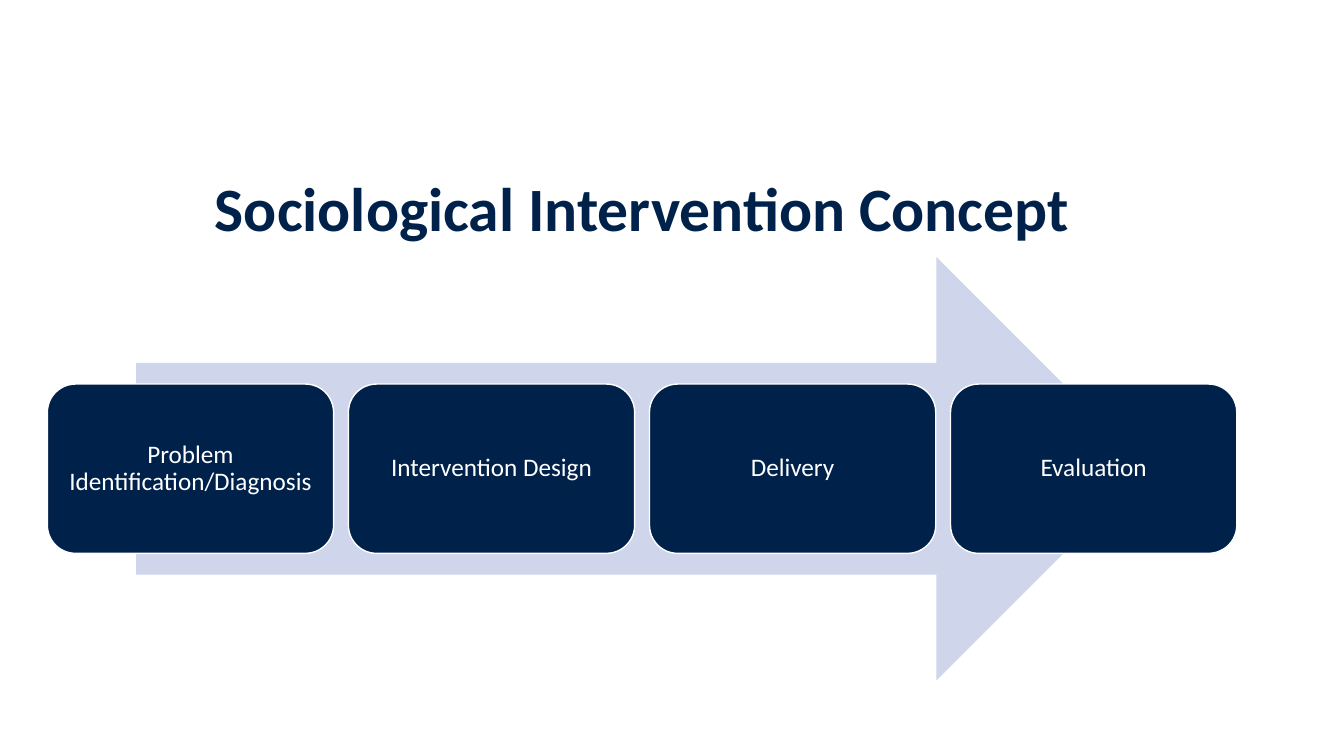
"""Build the Sociological Intervention Concept slide: four steps along an arrow."""
from dataclasses import dataclass

from pptx import Presentation
from pptx import util as u
from pptx.dml.color import RGBColor
from pptx.enum import shapes, text
from pptx.shapes.autoshape import Shape
from pptx.slide import Slide


@dataclass(frozen=True)
class Theme:
    """Colours and type of the slide."""

    navy: RGBColor = RGBColor(0x00, 0x21, 0x4A)
    lavender: RGBColor = RGBColor(0xCF, 0xD5, 0xEA)
    white: RGBColor = RGBColor(0xFF, 0xFF, 0xFF)
    font: str = "Calibri"
    title_size: float = 44
    step_size: float = 18
    line_spacing: float = 0.9


@dataclass(frozen=True)
class Box:
    """A rectangle in points."""

    left: float
    top: float
    width: float
    height: float

    def lengths(self) -> tuple[u.Length, ...]:
        """Return the position and size as lengths."""
        return tuple(u.Pt(value) for value in (self.left, self.top, self.width, self.height))


@dataclass(frozen=True)
class Step:
    """One stage of the intervention process."""

    label: str
    box: Box


THEME = Theme()
TITLE_BOX = Box(33.84, 118.08, 850.32, 65.52)
ARROW_BOX = Box(97.2, 183.6, 722.88, 302.4)
FIRST_STEP = Box(33.84, 274.32, 204.48, 120.96)
STEP_PITCH = 215.05
STEP_INSET = 5
LABELS = ("Problem Identification/Diagnosis", "Intervention Design", "Delivery", "Evaluation")
STEPS = [
    Step(label, Box(FIRST_STEP.left + index * STEP_PITCH, FIRST_STEP.top, FIRST_STEP.width, FIRST_STEP.height))
    for index, label in enumerate(LABELS)
]


def write_text(shape: Shape, wording: str, size: float, color: RGBColor, bold: bool = False) -> None:
    """Write one centred paragraph into a shape."""
    frame = shape.text_frame
    frame.word_wrap = True
    frame.vertical_anchor = text.MSO_ANCHOR.MIDDLE
    paragraph = frame.paragraphs[0]
    paragraph.text = wording
    paragraph.alignment = text.PP_ALIGN.CENTER
    paragraph.line_spacing = THEME.line_spacing
    paragraph.font.name = THEME.font
    paragraph.font.size = u.Pt(size)
    paragraph.font.bold = bold
    paragraph.font.color.rgb = color


def add_filled(slide: Slide, kind: shapes.MSO_SHAPE, box: Box, fill: RGBColor) -> Shape:
    """Add a flat preset shape without an outline."""
    shape = slide.shapes.add_shape(kind, *box.lengths())
    shape.shadow.inherit = False
    shape.fill.solid()
    shape.fill.fore_color.rgb = fill
    shape.line.fill.background()
    return shape


def add_step(slide: Slide, step: Step) -> None:
    """Add a rounded box with its step label."""
    shape = add_filled(slide, shapes.MSO_SHAPE.ROUNDED_RECTANGLE, step.box, THEME.navy)
    shape.line.color.rgb = THEME.white
    shape.line.width = u.Pt(1)
    frame = shape.text_frame
    frame.margin_left = frame.margin_right = u.Pt(STEP_INSET)
    frame.margin_top = frame.margin_bottom = u.Pt(STEP_INSET)
    write_text(shape, step.label, THEME.step_size, THEME.white)


def main() -> None:
    """Create and save the presentation."""
    presentation = Presentation()
    presentation.slide_width = u.Pt(960)
    presentation.slide_height = u.Pt(540)
    slide = presentation.slides.add_slide(presentation.slide_layouts[6])
    title = slide.shapes.add_textbox(*TITLE_BOX.lengths())
    write_text(title, "Sociological Intervention Concept", THEME.title_size, THEME.navy, bold=True)
    add_filled(slide, shapes.MSO_SHAPE.RIGHT_ARROW, ARROW_BOX, THEME.lavender)
    for step in STEPS:
        add_step(slide, step)
    presentation.save("out.pptx")


if __name__ == "__main__":
    main()
